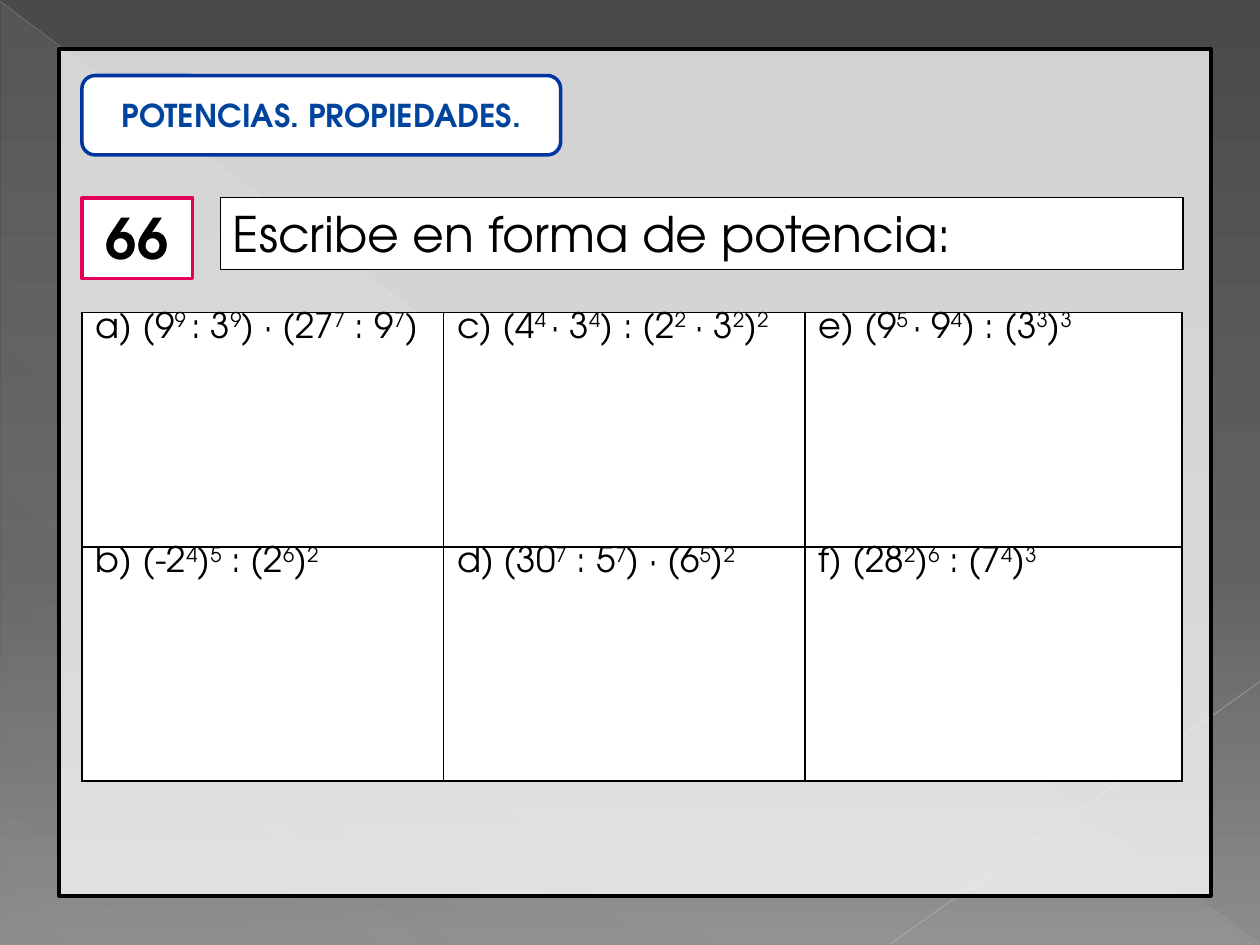
"""Builds a worksheet slide on the properties of powers."""
from dataclasses import dataclass

from lxml.etree import SubElement
from pptx import Presentation
from pptx.dml.color import RGBColor
from pptx.enum.shapes import MSO_CONNECTOR, MSO_SHAPE
from pptx.enum.text import MSO_ANCHOR, MSO_AUTO_SIZE, PP_ALIGN
from pptx.oxml.ns import qn
from pptx.util import Pt

PX = 9144


@dataclass(frozen=True)
class Theme:
    font: str = "TeX Gyre Adventor"
    black: str = "000000"
    white: str = "FFFFFF"
    pink: str = "E40059"
    blue: str = "00349E"
    title_blue: str = "00449E"
    title: int = 18
    number: int = 32
    task: int = 28
    exercise: int = 20


@dataclass(frozen=True)
class Box:
    x: int
    y: int
    w: int
    h: int
    line: str = Theme.black
    width: float = 2


@dataclass(frozen=True)
class Label:
    text: str
    size: int
    color: str = Theme.black
    bold: bool = False
    align: PP_ALIGN = PP_ALIGN.LEFT
    anchor: MSO_ANCHOR = MSO_ANCHOR.TOP
    fit: MSO_AUTO_SIZE = MSO_AUTO_SIZE.SHAPE_TO_FIT_TEXT


@dataclass(frozen=True)
class Ray:
    x1: int
    y1: int
    x2: int
    y2: int
    color: str
    width: float
    alpha: int


T = Theme()
BACKGROUND = [(0, "4A4A4A", 100), (60, "626262", 100), (100, "8C8C8C", 100)]
SHEEN = [(0, "D2D2D2", 10), (70, "D2D2D2", 8), (100, "D2D2D2", 1)]
RAYS = [
    Ray(0, 1, 999, 749, "BFBFBF", 0.39, 35),
    Ray(1000, 541, 707, 749, "C6C6C6", 0.47, 45),
]
TITLE = Label("POTENCIAS. PROPIEDADES.", T.title, T.title_blue, True,
              PP_ALIGN.CENTER, MSO_ANCHOR.MIDDLE, MSO_AUTO_SIZE.NONE)
NUMBER = Label("66", T.number, bold=True, align=PP_ALIGN.CENTER)
TASK = Label("Escribe en forma de potencia:", T.task)
COLUMNS = [287, 287, 299]
ROW_HEIGHT = 186
EXERCISES = [
    ["a) (9|9 |: 3|9|) · (27|7| : 9|7|)",
     "c) (4|4 |· 3|4|) : (2|2| · 3|2|)|2",
     "e) (9|5 |· 9|4|) : (3|3|)|3"],
    ["b) (-2|4|)|5| : (2|6|)|2",
     "d) (30|7| : 5|7|) · (6|5|)|2",
     "f) (28|2|)|6| : (7|4|)|3"],
]


def set_all(target, values: dict) -> None:
    """Set every named attribute on the target."""
    for name, value in values.items():
        setattr(target, name, value)


def set_alpha(element, percent: int) -> None:
    """Give the first colour inside the element an opacity."""
    color = next(element.iter(qn("a:srgbClr")))
    SubElement(color, qn("a:alpha"), val=str(percent * 1000))


def set_gradient(parent, stops: list, angle: int) -> None:
    """Turn the solid fill of the parent into a linear gradient."""
    solid = parent.find(qn("a:solidFill"))
    grad = SubElement(parent, qn("a:gradFill"), rotWithShape="1")
    parent.replace(solid, grad)
    gs_list = SubElement(grad, qn("a:gsLst"))
    for pos, color, alpha in stops:
        gs = SubElement(gs_list, qn("a:gs"), pos=str(pos * 1000))
        SubElement(gs, qn("a:srgbClr"), val=color)
        set_alpha(gs, alpha)
    SubElement(grad, qn("a:lin"), ang=str(angle * 60000), scaled="0")


def add_box(s, box: Box, kind: MSO_SHAPE = MSO_SHAPE.RECTANGLE):
    """Add a flat white shape with an outline."""
    sp = s.shapes.add_shape(kind, *(v * PX for v in (box.x, box.y, box.w, box.h)))
    sp.shadow.inherit = False
    sp.fill.solid()
    sp.fill.fore_color.rgb = RGBColor.from_string(T.white)
    sp.line.color.rgb = RGBColor.from_string(box.line)
    sp.line.width = Pt(box.width)
    return sp


def add_run(p, text: str, size: int, color: str, bold: bool = False):
    """Add a formatted run to the paragraph."""
    r = p.add_run()
    r.text = text
    set_all(r.font, {"name": T.font, "size": Pt(size), "bold": bold})
    r.font.color.rgb = RGBColor.from_string(color)
    return r


def write(sp, label: Label) -> None:
    """Write the label into the shape."""
    tf = sp.text_frame
    set_all(tf, {"word_wrap": True, "auto_size": label.fit,
                 "vertical_anchor": label.anchor})
    p = tf.paragraphs[0]
    p.alignment = label.align
    add_run(p, label.text, label.size, label.color, label.bold)


def add_ray(s, ray: Ray) -> None:
    """Add a faint background line."""
    sp = s.shapes.add_connector(
        MSO_CONNECTOR.STRAIGHT, *(v * PX for v in (ray.x1, ray.y1, ray.x2, ray.y2)))
    sp.line.color.rgb = RGBColor.from_string(ray.color)
    sp.line.width = Pt(ray.width)
    spPr = sp._element.spPr
    set_alpha(spPr, ray.alpha)
    SubElement(spPr, qn("a:effectLst"))


def add_title(s, box: Box, label: Label) -> None:
    """Set the title placeholder on a rounded frame in front of the panel."""
    add_box(s, box, MSO_SHAPE.ROUNDED_RECTANGLE)
    sp = s.shapes.title
    set_all(sp, {"left": box.x * PX, "top": box.y * PX,
                 "width": box.w * PX, "height": box.h * PX})
    write(sp, label)
    s.shapes._spTree.append(sp._element)


def fill_cell(cell, exercise: str) -> None:
    """Write one exercise, with every second part raised, and border its cell."""
    set_all(cell, {"margin_left": 7 * PX, "margin_right": 7 * PX,
                   "margin_top": 0, "margin_bottom": 0})
    p = cell.text_frame.paragraphs[0]
    set_all(p, {"space_after": Pt(6), "line_spacing": 1.0})
    p._p.get_or_add_pPr().set("marL", str(4 * PX))
    for i, part in enumerate(exercise.split("|")):
        r = add_run(p, part, T.exercise, T.black)
        if i % 2:
            r.font._element.set("baseline", "30000")
    tcPr = cell._tc.get_or_add_tcPr()
    for side in ("a:lnL", "a:lnR", "a:lnT", "a:lnB"):
        ln = SubElement(tcPr, qn(side), w=str(Pt(1)))
        SubElement(SubElement(ln, qn("a:solidFill")), qn("a:srgbClr"), val=T.black)
    cell.fill.solid()
    cell.fill.fore_color.rgb = RGBColor.from_string(T.white)


def add_exercises(s, x: int, y: int) -> None:
    """Add the table of exercises."""
    size = (sum(COLUMNS) * PX, len(EXERCISES) * ROW_HEIGHT * PX)
    table = s.shapes.add_table(len(EXERCISES), len(COLUMNS), x * PX, y * PX, *size).table
    set_all(table, {"first_row": False, "horz_banding": False})
    for column, width in zip(table.columns, COLUMNS):
        column.width = width * PX
    for row, exercises in zip(table.rows, EXERCISES):
        row.height = ROW_HEIGHT * PX
        for cell, exercise in zip(row.cells, exercises):
            fill_cell(cell, exercise)


def main() -> None:
    """Build and save the slide."""
    prs = Presentation()
    set_all(prs, {"slide_width": 1000 * PX, "slide_height": 750 * PX})
    s = prs.slides.add_slide(prs.slide_layouts[5])
    s.background.fill.solid()
    set_gradient(next(s._element.iter(qn("p:bgPr"))), BACKGROUND, 90)
    sheen = add_box(s, Box(1, 2, 998, 748), MSO_SHAPE.RIGHT_TRIANGLE)
    sheen.line.fill.background()
    set_gradient(sheen._element.spPr, SHEEN, 133)
    for ray in RAYS:
        add_ray(s, ray)
    set_alpha(add_box(s, Box(47, 39, 914, 672))._element.spPr, 75)
    write(add_box(s, Box(65, 157, 88, 64, T.pink)), NUMBER)
    write(add_box(s, Box(175, 157, 764, 57, width=0.75)), TASK)
    add_title(s, Box(65, 60, 380, 63, T.blue), TITLE)
    add_exercises(s, 65, 248)
    prs.save("out.pptx")


if __name__ == "__main__":
    main()
